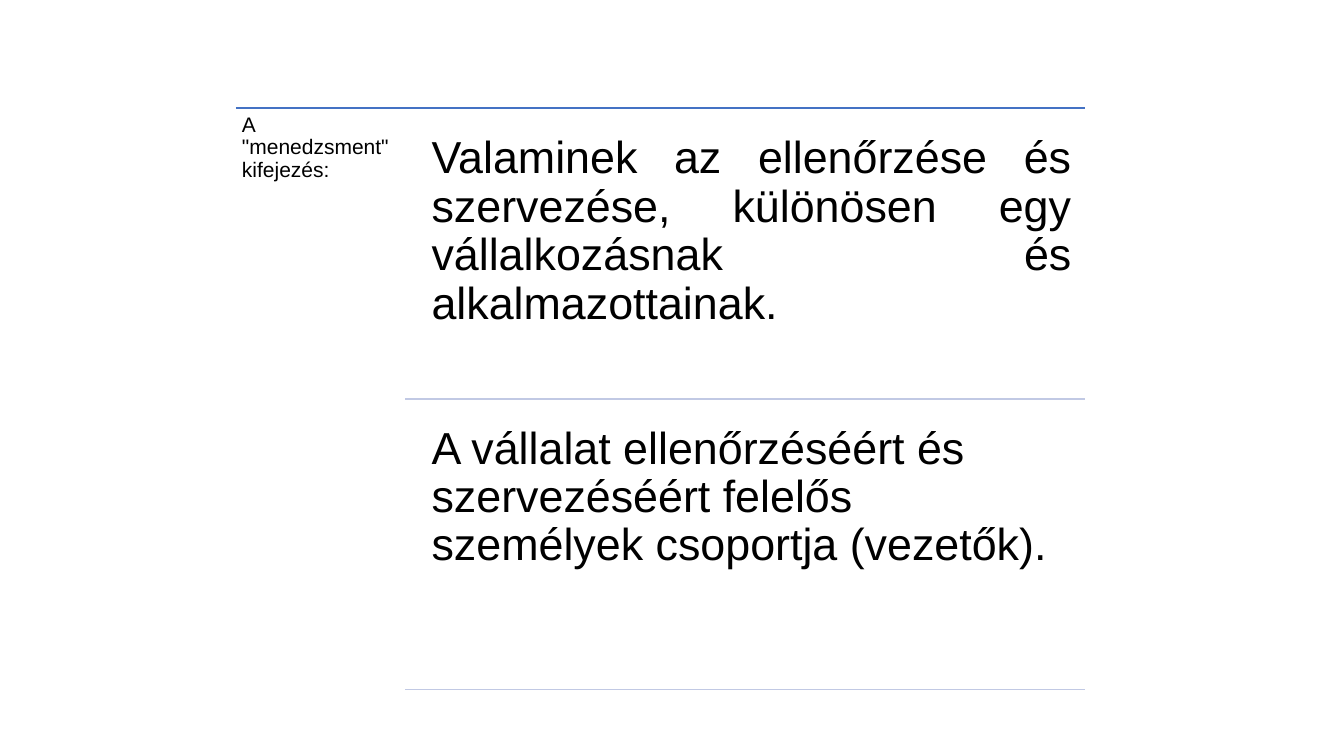
from dataclasses import dataclass

from lxml.etree import SubElement
from pptx import Presentation
from pptx.dml.color import RGBColor
from pptx.enum.shapes import MSO_CONNECTOR
from pptx.enum.text import MSO_ANCHOR, PP_ALIGN as Align
from pptx.oxml.ns import qn
from pptx.slide import Slide
from pptx.util import Inches, Pt


@dataclass(frozen=True)
class Theme:
    font: str = "Arial"
    text: RGBColor = RGBColor(0x00, 0x00, 0x00)
    main_rule: RGBColor = RGBColor(0x44, 0x72, 0xC4)
    row_rule: RGBColor = RGBColor(0xC1, 0xC9, 0xE4)
    term_size: int = 15
    definition_size: int = 32
    rule_width: int = 1


@dataclass(frozen=True)
class TextBlock:
    text: str
    left: float
    top: float
    width: float
    height: float
    inset: float
    size: int
    alignment: Align = Align.LEFT


@dataclass(frozen=True)
class Definition:
    text: str
    alignment: Align


THEME = Theme()
LEFT, RIGHT, TOP = 2.34, 10.76, 1.07
RULE_LEFT, DEFINITION_LEFT = 4.02, 4.15
FIRST_TOP, ROW_HEIGHT, ROW_PITCH = 1.21, 2.75, 2.88
TERM = TextBlock('A "menedzsment" kifejezés:', LEFT, TOP, 1.69, 5.91, 0.06, THEME.term_size)
DEFINITIONS = (
    Definition(
        "Valaminek az ellenőrzése és szervezése, különösen egy vállalkozásnak és alkalmazottainak.",
        Align.JUSTIFY,
    ),
    Definition(
        "A vállalat ellenőrzéséért és szervezéséért felelős személyek csoportja (vezetők).",
        Align.LEFT,
    ),
)


def add_rule(slide: Slide, left: float, top: float, color: RGBColor) -> None:
    """Draw a horizontal rule ending at the right margin."""
    rule = slide.shapes.add_connector(
        MSO_CONNECTOR.STRAIGHT, Inches(left), Inches(top), Inches(RIGHT), Inches(top)
    )
    rule.line.color.rgb = color
    rule.line.width = Pt(THEME.rule_width)
    SubElement(rule._element.spPr, qn("a:effectLst"))


def add_text(slide: Slide, block: TextBlock) -> None:
    """Add a top-anchored, wrapped text box."""
    shape = slide.shapes.add_textbox(
        Inches(block.left), Inches(block.top), Inches(block.width), Inches(block.height)
    )
    frame = shape.text_frame
    frame.word_wrap = True
    frame.vertical_anchor = MSO_ANCHOR.TOP
    frame.margin_left = frame.margin_right = Inches(block.inset)
    frame.margin_top = frame.margin_bottom = Inches(block.inset)
    paragraph = frame.paragraphs[0]
    paragraph.text = block.text
    paragraph.alignment = block.alignment
    paragraph.line_spacing = 0.9
    paragraph.font.name = THEME.font
    paragraph.font.size = Pt(block.size)
    paragraph.font.color.rgb = THEME.text


def main() -> None:
    """Build and save the management definition slide."""
    presentation = Presentation()
    presentation.slide_width = Inches(13.33)
    presentation.slide_height = Inches(7.5)
    slide = presentation.slides.add_slide(presentation.slide_layouts[6])
    add_rule(slide, LEFT, TOP, THEME.main_rule)
    add_text(slide, TERM)
    for index, definition in enumerate(DEFINITIONS):
        top = FIRST_TOP + index * ROW_PITCH
        add_text(
            slide,
            TextBlock(
                definition.text, DEFINITION_LEFT, top, RIGHT - DEFINITION_LEFT, ROW_HEIGHT,
                0.13, THEME.definition_size, definition.alignment,
            ),
        )
        add_rule(slide, RULE_LEFT, top + ROW_HEIGHT, THEME.row_rule)
    presentation.save("out.pptx")


if __name__ == "__main__":
    main()
